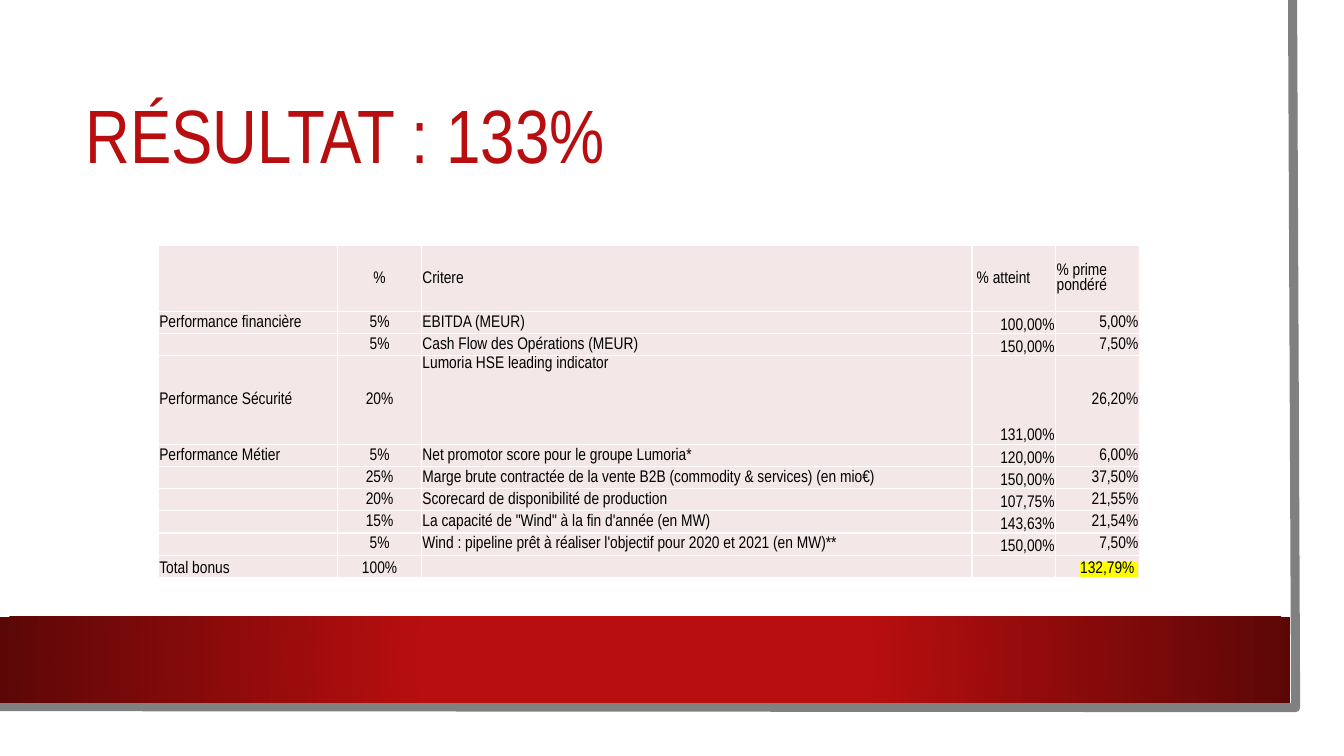
from lxml.etree import SubElement
from pptx import Presentation
from pptx.dml.color import RGBColor
from pptx.enum.shapes import MSO_SHAPE
from pptx.enum.text import MSO_ANCHOR, PP_ALIGN
from pptx.oxml import parse_xml
from pptx.oxml.ns import nsdecls, qn
from pptx.util import Inches, Pt

WIDE, HIGH = 13.33, 7.5
FONT = "Arial Narrow"
RED, DARK, GREY, WHITE, BLACK = "B80E0F", "5C0707", "808080", "FFFFFF", "000000"
PINK, YELLOW = "F3E7E7", "FFFF00"

COLS = [1.78, 0.83, 5.46, 0.83, 0.83]
ROW, HEAD_ROW, SAFE_ROW = 0.22, 0.66, 0.88
HEAD, SAFE = 0, 3
LEFT, MID, RIGHT = PP_ALIGN.LEFT, PP_ALIGN.CENTER, PP_ALIGN.RIGHT
ALIGN = [LEFT, MID, LEFT, RIGHT, RIGHT]
GOALS = [
    ["", "%", "Critere", " % atteint", "% prime pondéré"],
    ["Performance financière", "5%", "EBITDA (MEUR)", "100,00%", "5,00%"],
    ["", "5%", "Cash Flow des Opérations (MEUR)", "150,00%", "7,50%"],
    ["Performance Sécurité", "20%", "Lumoria HSE leading indicator", "131,00%", "26,20%"],
    ["Performance Métier", "5%", "Net promotor score pour le groupe Lumoria*",
     "120,00%", "6,00%"],
    ["", "25%", "Marge brute contractée de la vente B2B (commodity & services) (en mio€)",
     "150,00%", "37,50%"],
    ["", "20%", "Scorecard de disponibilité de production", "107,75%", "21,55%"],
    ["", "15%", "La capacité de \"Wind\" à la fin d'année (en MW)", "143,63%", "21,54%"],
    ["", "5%", "Wind : pipeline prêt à réaliser l'objectif pour 2020 et 2021 (en MW)**",
     "150,00%", "7,50%"],
    ["Total bonus", "100%", "", "", "132,79% "],
]
TOTAL = len(GOALS) - 1


def paint(target, tint):
    target.solid()
    target.fore_color.rgb = RGBColor.from_string(tint)


def style(para, size, tint):
    for run in para.runs:
        run.font.size = Pt(size)
        run.font.name = FONT
        paint(run.font.fill, tint)


def add_edge(slide):
    """Grey line down the right side and along the foot."""
    pen = slide.shapes.build_freeform(Inches(12.82), 0)
    pen.add_line_segments([(Inches(12.85), Inches(7.02)), (0, Inches(7.01))], close=False)
    edge = pen.convert_to_shape()
    edge.shadow.inherit = False
    edge.fill.background()
    paint(edge.line.fill, GREY)
    edge.line.width = Pt(6.5)


def add_band(slide):
    """Red band that darkens towards its ends."""
    band = slide.shapes.add_shape(MSO_SHAPE.RECTANGLE, 0, Inches(6.12),
                                  Inches(12.8), Inches(0.85))
    band.shadow.inherit = False
    band.line.fill.background()
    props = band.fill._xPr
    props.find(qn("a:prstGeom")).addnext(parse_xml(
        f'<a:gradFill {nsdecls("a")} rotWithShape="1"><a:gsLst>'
        f'<a:gs pos="34000"><a:srgbClr val="{RED}"/></a:gs>'
        f'<a:gs pos="100000"><a:srgbClr val="{DARK}"/></a:gs></a:gsLst>'
        '<a:path path="circle"><a:fillToRect l="50000" t="50000" r="50000" b="50000"/>'
        '</a:path></a:gradFill>'))


def set_title(slide, text):
    title = slide.shapes.title
    title.left, title.top = Inches(0.75), Inches(0.75)
    title.width, title.height = Inches(11.37), Inches(1.26)
    frame = title.text_frame
    frame.text = text
    frame.vertical_anchor = MSO_ANCHOR.MIDDLE
    para = frame.paragraphs[0]
    para.alignment = LEFT
    para.line_spacing = 0.9
    style(para, 54, RED)


def add_rules(cell):
    """White borders go ahead of the fill in the cell's properties."""
    props = cell._tc.get_or_add_tcPr()
    for spot, side in enumerate(["lnL", "lnR", "lnT", "lnB"]):
        props.insert(spot, parse_xml(
            f'<a:{side} {nsdecls("a")} w="12700"><a:solidFill>'
            f'<a:srgbClr val="{WHITE}"/></a:solidFill></a:{side}>'))


def mark(run, tint):
    glow = parse_xml(f'<a:highlight {nsdecls("a")}><a:srgbClr val="{tint}"/></a:highlight>')
    run.font._element.find(qn("a:solidFill")).addnext(glow)


def anchor(row, col):
    if row == SAFE and col == 2:
        return MSO_ANCHOR.TOP
    if row == TOTAL or (col == 3 and row != HEAD):
        return MSO_ANCHOR.BOTTOM
    return MSO_ANCHOR.MIDDLE


def fill_cell(cell, text, row, col):
    cell.margin_left = cell.margin_right = cell.margin_top = Inches(0.01)
    cell.margin_bottom = 0
    cell.vertical_anchor = anchor(row, col)
    paint(cell.fill, PINK)
    add_rules(cell)
    para = cell.text_frame.paragraphs[0]
    if text:
        para.text = text
        para.alignment = LEFT if row == HEAD and col > 1 else ALIGN[col]
        style(para, 12, BLACK)
    else:
        # Keeps an empty cell from stretching its row
        SubElement(para._p, qn("a:endParaRPr"), sz="1200")


def add_goals(slide):
    high = [{HEAD: HEAD_ROW, SAFE: SAFE_ROW}.get(row, ROW) for row in range(len(GOALS))]
    frame = slide.shapes.add_table(len(GOALS), len(COLS), Inches(1.57), Inches(2.43),
                                   Inches(sum(COLS)), Inches(sum(high)))
    table = frame.table
    table.first_row = table.horz_banding = False
    for col, wide in enumerate(COLS):
        table.columns[col].width = Inches(wide)
    for row, texts in enumerate(GOALS):
        table.rows[row].height = Inches(high[row])
        for col, text in enumerate(texts):
            fill_cell(table.cell(row, col), text, row, col)
    bonus = table.cell(TOTAL, len(COLS) - 1)
    mark(bonus.text_frame.paragraphs[0].runs[0], YELLOW)


def main():
    deck = Presentation()
    deck.slide_width, deck.slide_height = Inches(WIDE), Inches(HIGH)
    slide = deck.slides.add_slide(deck.slide_layouts[5])
    paint(slide.background.fill, WHITE)
    # Frame
    add_edge(slide)
    add_band(slide)
    # Content
    set_title(slide, "RÉSULTAT : 133%")
    add_goals(slide)
    deck.save("out.pptx")


if __name__ == "__main__":
    main()
